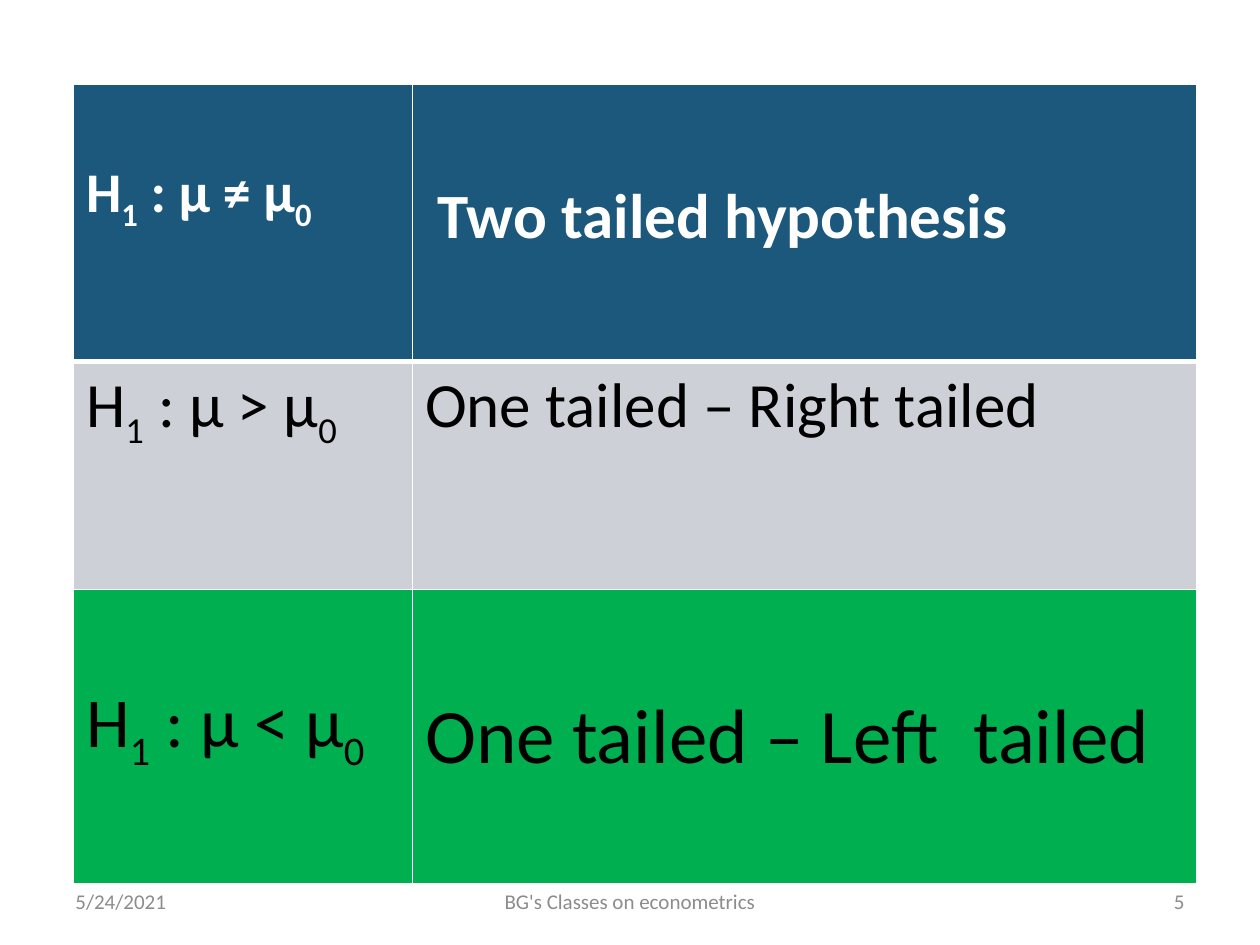
"""Build a slide with a table of alternative hypotheses and their tails."""

from dataclasses import dataclass

import lxml.etree
import pptx
import pptx.dml.color
import pptx.enum.text
import pptx.oxml.ns
import pptx.slide
import pptx.table
import pptx.text.text
import pptx.util

Pt = pptx.util.Pt
Align = pptx.enum.text.PP_ALIGN


@dataclass(frozen=True)
class Theme:
    font: str = "Calibri"
    white: str = "FFFFFF"
    black: str = "000000"
    blue: str = "1B587C"
    grey: str = "CDD1D7"
    green: str = "00B050"
    footer: str = "8C8C8C"
    small: float = 12
    medium: float = 32
    large: float = 36
    larger: float = 40
    largest: float = 44
    thin: float = 1
    thick: float = 3


@dataclass(frozen=True)
class Entry:
    wording: tuple[str, ...]
    size: float
    top: float = 3.6
    left: float = 7.2


@dataclass(frozen=True)
class Hypothesis:
    symbols: Entry
    meaning: Entry
    height: float
    fill: str
    color: str
    bold: bool = False


@dataclass(frozen=True)
class FooterItem:
    text: str
    left: float
    width: float
    align: Align


THEME = Theme()
TABLE_LEFT, TABLE_TOP = 42, 48.2
COLUMN_WIDTHS = (193.7, 448)
FOOTER_TOP, FOOTER_HEIGHT = 500.4, 28.8


def symbols(relation: str) -> tuple[str, ...]:
    return "H", "1", f" : μ {relation} μ", "0"


HYPOTHESES = (
    Hypothesis(Entry(symbols("≠"), THEME.medium, top=42.6),
               Entry(("Two tailed hypothesis",), THEME.large, top=53.7, left=14.4),
               158.4, THEME.blue, THEME.white, bold=True),
    Hypothesis(Entry(symbols(">"), THEME.large),
               Entry(("One tailed – Right tailed",), THEME.large),
               130.3, THEME.grey, THEME.black),
    Hypothesis(Entry(symbols("<"), THEME.larger, top=52.4),
               Entry(("One tailed – Left  tailed",), THEME.largest, top=57.3),
               168, THEME.green, THEME.black),
)

FOOTER = (
    FooterItem("5/24/2021", 36, 168, Align.LEFT),
    FooterItem("BG's Classes on econometrics", 246, 228, Align.CENTER),
    FooterItem("5", 516, 168, Align.RIGHT),
)


def write(frame: pptx.text.text.TextFrame, wording: tuple[str, ...], *, size: float,
          color: str, bold: bool = False, align: Align = Align.LEFT) -> None:
    paragraph = frame.paragraphs[0]
    paragraph.alignment = align
    for index, piece in enumerate(wording):
        run = paragraph.add_run()
        run.text = piece
        run.font.name = THEME.font
        run.font.size = Pt(size)
        run.font.bold = bold
        run.font.color.rgb = pptx.dml.color.RGBColor.from_string(color)
        if index % 2:
            run._r.get_or_add_rPr().set("baseline", "-25000")


def draw_borders(cell: pptx.table._Cell, top: float, bottom: float) -> None:
    qn = pptx.oxml.ns.qn
    properties = cell._tc.get_or_add_tcPr()
    widths = {"a:lnL": THEME.thin, "a:lnR": THEME.thin, "a:lnT": top, "a:lnB": bottom}
    for position, (side, width) in enumerate(widths.items()):
        line = lxml.etree.Element(qn(side), w=str(int(Pt(width))))
        fill = lxml.etree.SubElement(line, qn("a:solidFill"))
        lxml.etree.SubElement(fill, qn("a:srgbClr"), val=THEME.white)
        properties.insert(position, line)


def draw_table(slide: pptx.slide.Slide) -> None:
    table = slide.shapes.add_table(
        len(HYPOTHESES), len(COLUMN_WIDTHS), Pt(TABLE_LEFT), Pt(TABLE_TOP),
        Pt(sum(COLUMN_WIDTHS)), Pt(sum(h.height for h in HYPOTHESES))).table
    for column, width in zip(table.columns, COLUMN_WIDTHS):
        column.width = Pt(width)
    for index, (row, hypothesis) in enumerate(zip(table.rows, HYPOTHESES)):
        row.height = Pt(hypothesis.height)
        for cell, entry in zip(row.cells, (hypothesis.symbols, hypothesis.meaning)):
            cell.fill.solid()
            cell.fill.fore_color.rgb = pptx.dml.color.RGBColor.from_string(hypothesis.fill)
            cell.margin_top, cell.margin_left = Pt(entry.top), Pt(entry.left)
            draw_borders(cell, THEME.thick if index == 1 else THEME.thin,
                         THEME.thick if index == 0 else THEME.thin)
            write(cell.text_frame, entry.wording, size=entry.size,
                  color=hypothesis.color, bold=hypothesis.bold)


def draw_footer(slide: pptx.slide.Slide, item: FooterItem) -> None:
    frame = slide.shapes.add_textbox(Pt(item.left), Pt(FOOTER_TOP), Pt(item.width),
                                     Pt(FOOTER_HEIGHT)).text_frame
    frame.word_wrap = True
    frame.vertical_anchor = pptx.enum.text.MSO_ANCHOR.MIDDLE
    write(frame, (item.text,), size=THEME.small, color=THEME.footer, align=item.align)


def main() -> None:
    presentation = pptx.Presentation()
    presentation.slide_width, presentation.slide_height = Pt(720), Pt(540)
    slide = presentation.slides.add_slide(presentation.slide_layouts[6])
    draw_table(slide)
    for item in FOOTER:
        draw_footer(slide, item)
    presentation.save("out.pptx")


if __name__ == "__main__":
    main()
